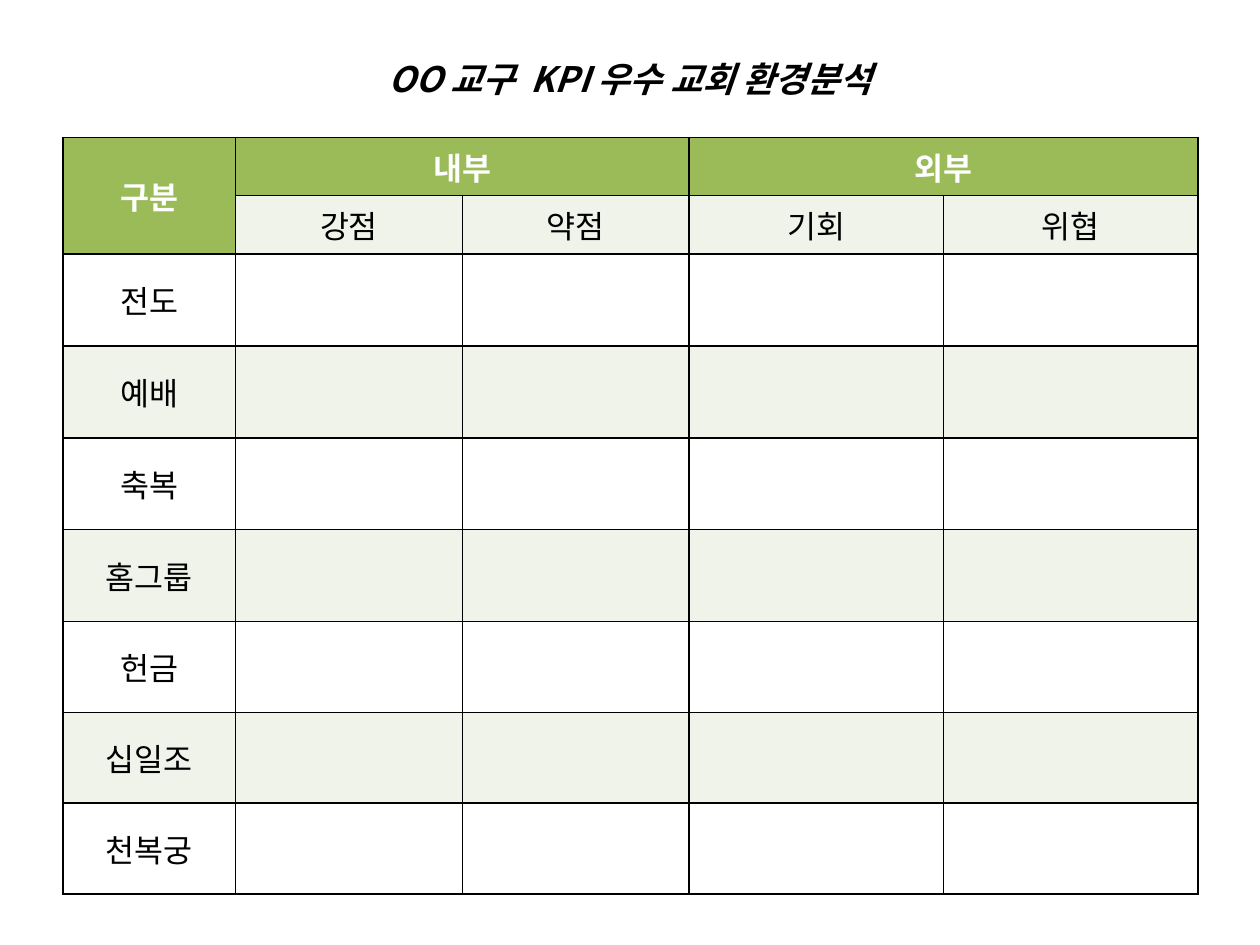
from lxml import etree
from pptx import Presentation, util as u
from pptx.dml.color import RGBColor
from pptx.enum import text
from pptx.oxml import ns

FONT = "Noto Sans CJK KR"
COLORS = {
    "header": "9BBB59",
    "band": "EFF3EA",
    "plain": "FFFFFF",
    "light_text": "FFFFFF",
    "dark_text": "000000",
    "border": "000000",
}
SLIDE_WIDTH, SLIDE_HEIGHT = u.Inches(10), u.Inches(7.5)
MARGIN = 0.05
COLUMN_WIDTHS = [1.37, 1.8, 1.8, 2.02, 2.02]
ROW_HEIGHTS = [0.36] * 2 + [0.73] * 4 + [0.72] * 3
GROUPS = ["내부", "외부"]
FACTORS = ["강점", "약점", "기회", "위협"]
AREAS = ["전도", "예배", "축복", "홈그룹", "헌금", "십일조", "천복궁"]


def color(name):
    return RGBColor.from_string(COLORS[name])


def add_run(paragraph, content, size, color_name, bold=False, italic=False):
    paragraph.alignment = text.PP_ALIGN.CENTER
    run = paragraph.add_run()
    run.text = content
    font = run.font
    font.size = u.Pt(size)
    font.bold, font.italic = bold, italic
    font.color.rgb = color(color_name)
    font.name = FONT
    properties = run._r.get_or_add_rPr()
    etree.SubElement(properties, ns.qn("a:ea"), typeface=FONT)


def add_title(slide, content):
    title = slide.shapes.title
    title.left, title.top = int(SLIDE_WIDTH * MARGIN), u.Inches(0.31)
    title.width, title.height = int(SLIDE_WIDTH * (1 - 2 * MARGIN)), u.Inches(0.63)
    title.text_frame.vertical_anchor = text.MSO_ANCHOR.MIDDLE
    add_run(title.text_frame.paragraphs[0], content, 20, "dark_text", True, True)


def add_borders(cell):
    properties = cell._tc.get_or_add_tcPr()
    for index, side in enumerate(["lnL", "lnR", "lnT", "lnB"]):
        line = etree.Element(ns.qn(f"a:{side}"), w=str(u.Pt(1)))
        fill = etree.SubElement(line, ns.qn("a:solidFill"))
        etree.SubElement(fill, ns.qn("a:srgbClr"), val=COLORS["border"])
        properties.insert(index, line)


def format_cell(cell, fill_name):
    cell.fill.solid()
    cell.fill.fore_color.rgb = color(fill_name)
    add_borders(cell)


def write_cell(cell, content, header=False, centered=True):
    if centered:
        cell.vertical_anchor = text.MSO_ANCHOR.MIDDLE
    color_name = "light_text" if header else "dark_text"
    add_run(cell.text_frame.paragraphs[0], content, 18, color_name, header)


def fill_name(row, column):
    if row == 0 or (row == 1 and column == 0):
        return "header"
    return "band" if row % 2 else "plain"


def add_analysis_table(slide):
    table = slide.shapes.add_table(
        len(ROW_HEIGHTS), len(COLUMN_WIDTHS),
        int(SLIDE_WIDTH * MARGIN), u.Inches(1.09),
        u.Inches(sum(COLUMN_WIDTHS)), u.Inches(sum(ROW_HEIGHTS)),
    ).table
    for column, width in zip(table.columns, COLUMN_WIDTHS):
        column.width = u.Inches(width)
    for row, height in zip(table.rows, ROW_HEIGHTS):
        row.height = u.Inches(height)
    for row in range(len(ROW_HEIGHTS)):
        for column in range(len(COLUMN_WIDTHS)):
            format_cell(table.cell(row, column), fill_name(row, column))

    table.cell(0, 0).merge(table.cell(1, 0))
    write_cell(table.cell(0, 0), "구분", header=True)
    for index, group in enumerate(GROUPS):
        first = 1 + 2 * index
        table.cell(0, first).merge(table.cell(0, first + 1))
        write_cell(table.cell(0, first), group, header=True, centered=False)
    for column, factor in enumerate(FACTORS, 1):
        write_cell(table.cell(1, column), factor, centered=False)
    for row, area in enumerate(AREAS, 2):
        write_cell(table.cell(row, 0), area)


def main():
    presentation = Presentation()
    presentation.slide_width, presentation.slide_height = SLIDE_WIDTH, SLIDE_HEIGHT
    slide = presentation.slides.add_slide(presentation.slide_layouts[5])
    add_analysis_table(slide)
    add_title(slide, "OO 교구  KPI 우수 교회 환경분석")
    presentation.save("out.pptx")


if __name__ == "__main__":
    main()
